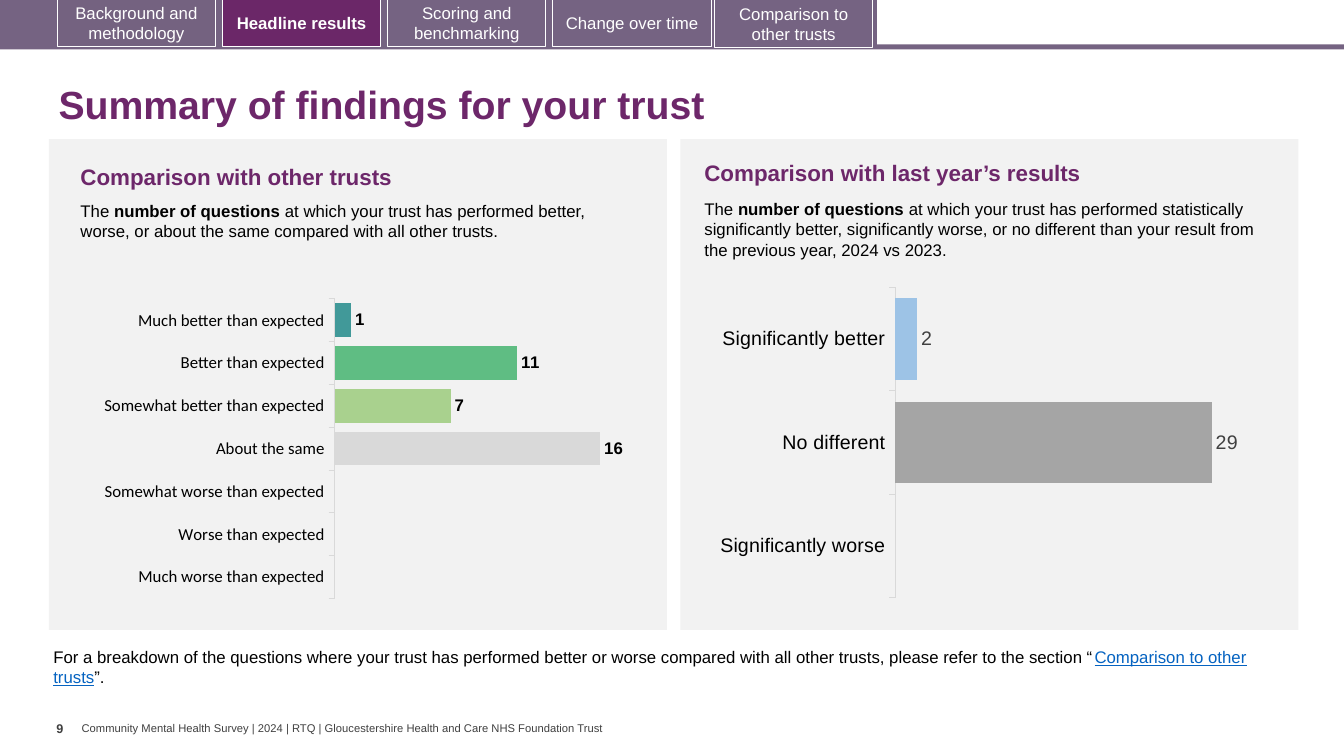
from pptx import Presentation
from pptx.chart.data import CategoryChartData
from pptx.dml.color import RGBColor
from pptx.enum.chart import XL_CHART_TYPE, XL_LABEL_POSITION, XL_TICK_MARK
from pptx.enum.shapes import MSO_SHAPE
from pptx.enum.text import MSO_ANCHOR, MSO_AUTO_SIZE, PP_ALIGN
from pptx.oxml import parse_xml
from pptx.oxml.ns import nsdecls, qn
from pptx.util import Pt

RECTANGLE = MSO_SHAPE.RECTANGLE
BAR_CLUSTERED = XL_CHART_TYPE.BAR_CLUSTERED
OUTSIDE_END = XL_LABEL_POSITION.OUTSIDE_END
TICK_OUTSIDE, TICK_NONE = XL_TICK_MARK.OUTSIDE, XL_TICK_MARK.NONE
TOP, MIDDLE = MSO_ANCHOR.TOP, MSO_ANCHOR.MIDDLE
LEFT, CENTER = PP_ALIGN.LEFT, PP_ALIGN.CENTER
NO_AUTO_SIZE = MSO_AUTO_SIZE.NONE

COLORS = {
    "heading": "6D276A", "bar": "756382", "tab": "746280", "active": "6B2768",
    "white": "FFFFFF", "black": "000000", "grey": "404040", "panel": "F2F2F2",
    "axis": "D9D9D9", "link": "0563C1", "series": "4472C4",
    "much_better": "419999", "better": "5FBD83", "somewhat_better": "A9D18E",
    "same": "D9D9D9", "somewhat_worse": "FFD966", "worse": "F1BE48",
    "much_worse": "E87722", "significant_better": "9DC3E6",
    "no_different": "A5A5A5", "significant_worse": "7030A0",
}


def color(name):
    return RGBColor.from_string(COLORS[name])


class SlideBuilder:
    font_name = "Arial"

    def __init__(self, slide):
        self.slide = slide

    def style(self, font, size, tint, bold=False, name=None):
        font.name = name or self.font_name
        font.size = Pt(size)
        font.bold = bold
        font.color.rgb = color(tint)

    def title(self, text, left, top, width, height):
        title = self.slide.shapes.title
        title.left, title.top = Pt(left), Pt(top)
        title.width, title.height = Pt(width), Pt(height)
        frame = title.text_frame
        frame.text = text
        frame.vertical_anchor = MIDDLE
        frame.auto_size = NO_AUTO_SIZE
        para = frame.paragraphs[0]
        para.alignment = LEFT
        para.line_spacing = 0.9
        self.style(para.runs[0].font, 28, "heading", True)

    def rectangle(self, left, top, width, height, fill, line=None):
        box = self.slide.shapes.add_shape(
            RECTANGLE, Pt(left), Pt(top), Pt(width), Pt(height))
        box.shadow.inherit = False
        box.fill.solid()
        box.fill.fore_color.rgb = color(fill)
        if line:
            box.line.color.rgb = color(line)
            box.line.width = Pt(0.75)
        else:
            box.line.fill.background()
        return box

    def tab(self, text, left, top, fill, bold):
        box = self.rectangle(left, top, 113, 33.84, fill, "white")
        frame = box.text_frame
        frame.text = text
        frame.word_wrap = True
        frame.vertical_anchor = MIDDLE
        para = frame.paragraphs[0]
        para.alignment = CENTER
        self.style(para.runs[0].font, 12, "white", bold)

    def text(self, spans, left, top, width, height, size=12, tint="black",
             bold=False, wrap=True, insets=(7.2, 3.6), anchor=TOP):
        box = self.slide.shapes.add_textbox(
            Pt(left), Pt(top), Pt(width), Pt(height))
        frame = box.text_frame
        frame.word_wrap = wrap
        frame.vertical_anchor = anchor
        frame.margin_left = frame.margin_right = Pt(insets[0])
        frame.margin_top = frame.margin_bottom = Pt(insets[1])
        for text in spans:
            span = frame.paragraphs[0].add_run()
            span.text = text
            self.style(span.font, size, tint, bold)
        return frame.paragraphs[0].runs

    def bar_chart(self, bars, left, top, width, height, plot_area, maximum,
                  size, axis_font, label_size, label_tint, label_bold):
        data = CategoryChartData(number_format="0")
        data.categories = [name for name, value, tint in bars]
        data.add_series("Series 1", [value for name, value, tint in bars])
        chart = self.slide.shapes.add_chart(
            BAR_CLUSTERED, Pt(left), Pt(top), Pt(width), Pt(height), data).chart
        chart.has_legend = False
        chart.has_title = False
        self.style(chart.font, size, "black", name=axis_font)

        categories = chart.category_axis
        categories.reverse_order = True
        categories.has_major_gridlines = False
        categories.major_tick_mark = TICK_OUTSIDE
        categories.minor_tick_mark = TICK_NONE
        categories.format.line.color.rgb = color("axis")
        categories.format.line.width = Pt(0.75)
        self.style(categories.tick_labels.font, label_size, "black", name=axis_font)
        values = chart.value_axis
        values.minimum_scale, values.maximum_scale = 0, maximum
        values.has_major_gridlines = False
        values.visible = False

        plot = chart.plots[0]
        plot.gap_width = 27
        plot.vary_by_categories = False
        series = plot.series[0]
        series.format.fill.solid()
        series.format.fill.fore_color.rgb = color("series")
        for index, (name, value, tint) in enumerate(bars):
            fill = series.points[index].format.fill
            fill.solid()
            fill.fore_color.rgb = color(tint)
        labels = series.data_labels
        labels.show_value = True
        labels.position = OUTSIDE_END
        labels.number_format = "0"
        labels.number_format_is_linked = False
        self.style(labels.font, label_size, label_tint, label_bold)
        self.place_plot(chart, plot_area)

    def place_plot(self, chart, plot_area):
        area = chart.element.find(qn("c:chart")).find(qn("c:plotArea"))
        present = area.find(qn("c:layout"))
        if present is not None:
            area.remove(present)
        sizes = "".join(f'<c:{key} val="{value}"/>'
                        for key, value in zip("xywh", plot_area))
        area.insert(0, parse_xml(
            f'<c:layout {nsdecls("c")}><c:manualLayout>'
            '<c:layoutTarget val="inner"/><c:xMode val="edge"/>'
            f'<c:yMode val="edge"/>{sizes}</c:manualLayout></c:layout>'))


def main():
    deck = Presentation()
    deck.slide_width, deck.slide_height = Pt(960), Pt(540)
    page = SlideBuilder(deck.slides.add_slide(deck.slide_layouts[5]))

    page.text(["Community Mental Health Survey | 2024 | RTQ | "
               "Gloucestershire Health and Care NHS Foundation Trust"],
              58.3, 515.5, 377, 9.4, size=8, tint="grey", wrap=False,
              insets=(0, 0), anchor=MIDDLE)
    page.rectangle(0, 31.7, 960, 3.6, "bar")
    page.rectangle(0, 0, 626.4, 33.8, "bar")
    tabs = [
        ("Background and methodology", 41, -0.7, "tab"),
        ("Headline results", 159, -0.7, "active"),
        ("Scoring and benchmarking", 277, -0.7, "bar"),
        ("Change over time", 395, -0.7, "bar"),
        ("Comparison to other trusts", 510.5, 0, "bar"),
    ]
    for text, left, top, fill in tabs:
        page.tab(text, left, top, fill, bold=fill == "active")

    page.title("Summary of findings for your trust", 34.6, 50.4, 899.3, 51.8)

    for left in (35, 486):
        page.rectangle(left, 99.4, 441.4, 350.6, "panel")
    intros = [
        ("Comparison with other trusts", 50.4, 113, 139.7, 381,
         "at which your trust has performed better, worse, or about the same "
         "compared with all other trusts."),
        ("Comparison with last year’s results", 496.1, 110.2, 138.6, 413.3,
         "at which your trust has performed statistically significantly better, "
         "significantly worse, or no different than your result from the "
         "previous year, 2024 vs 2023."),
    ]
    for heading, left, heading_top, body_top, width, ending in intros:
        page.text([heading], left, heading_top, 396, 26.6, 16, "heading", True)
        spans = page.text(["The ", "number of questions ", ending],
                          left, body_top, width, 51.1)
        spans[1].font.bold = True

    page.bar_chart(
        [("Much better than expected", 1, "much_better"),
         ("Better than expected", 11, "better"),
         ("Somewhat better than expected", 7, "somewhat_better"),
         ("About the same", 16, "same"),
         ("Somewhat worse than expected", None, "somewhat_worse"),
         ("Worse than expected", None, "worse"),
         ("Much worse than expected", None, "much_worse")],
        29.5, 195.8, 448.6, 245.5, (0.467, 0.072, 0.476, 0.872), 18,
        10, "Calibri", 12, "black", True)
    page.bar_chart(
        [("Significantly better", 2, "significant_better"),
         ("No different", 29, "no_different"),
         ("Significantly worse", None, "significant_worse")],
        478.1, 196.6, 448.6, 244.1, (0.36, 0.035, 0.608, 0.909), 35,
        14, "Arial", 14, "grey", False)

    spans = page.text(
        ["For a breakdown of the questions where your trust has performed better "
         "or worse compared with all other trusts, please refer to the section “",
         "Comparison to other trusts", "”."], 31, 458.6, 879.1, 36)
    spans[1].font.color.rgb = color("link")
    spans[1].font.underline = True
    page.text(["9"], 40.3, 511.2, 18, 28.8, size=9, tint="grey", bold=True,
              wrap=False, insets=(0, 3.6))
    deck.save("out.pptx")


if __name__ == "__main__":
    main()
